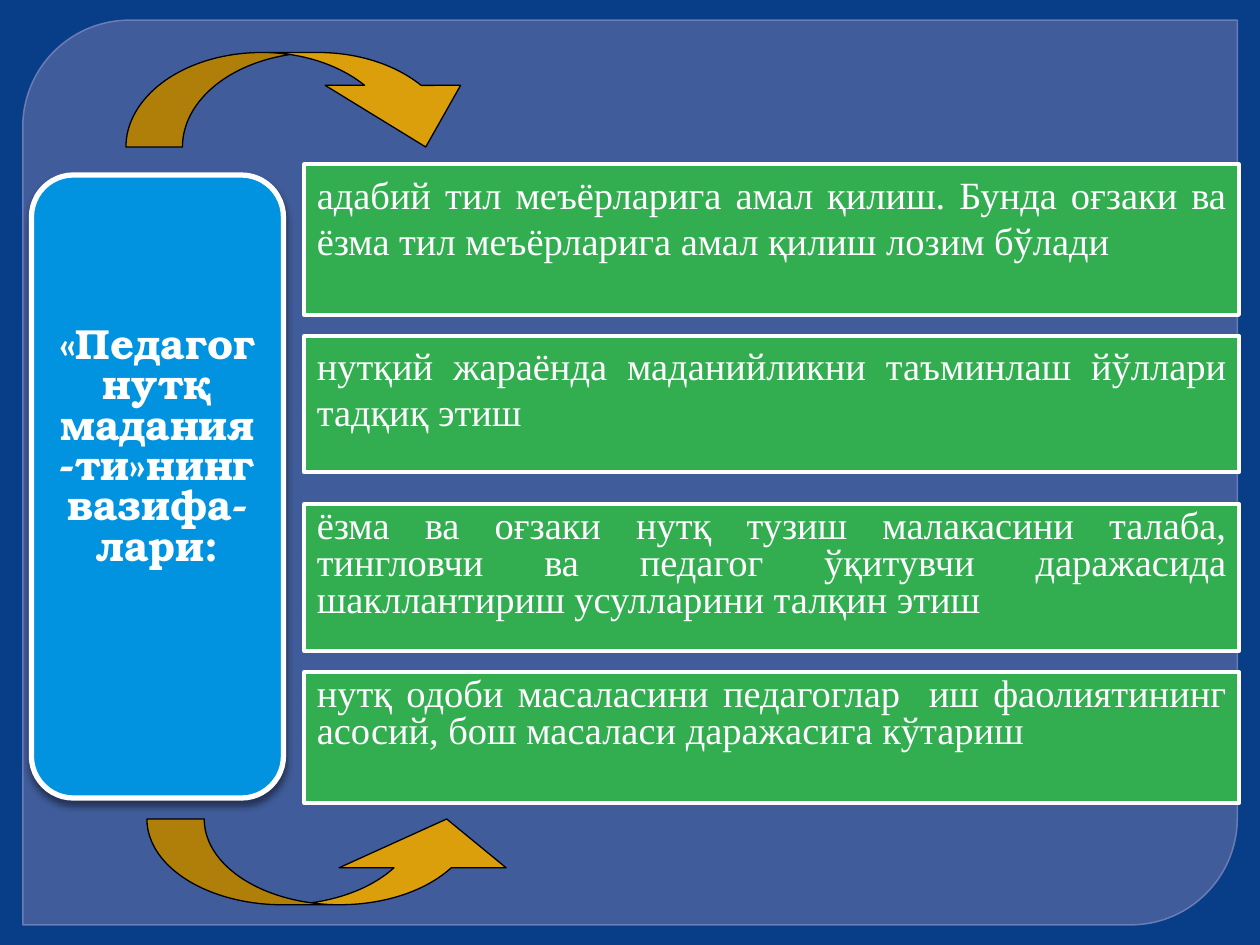
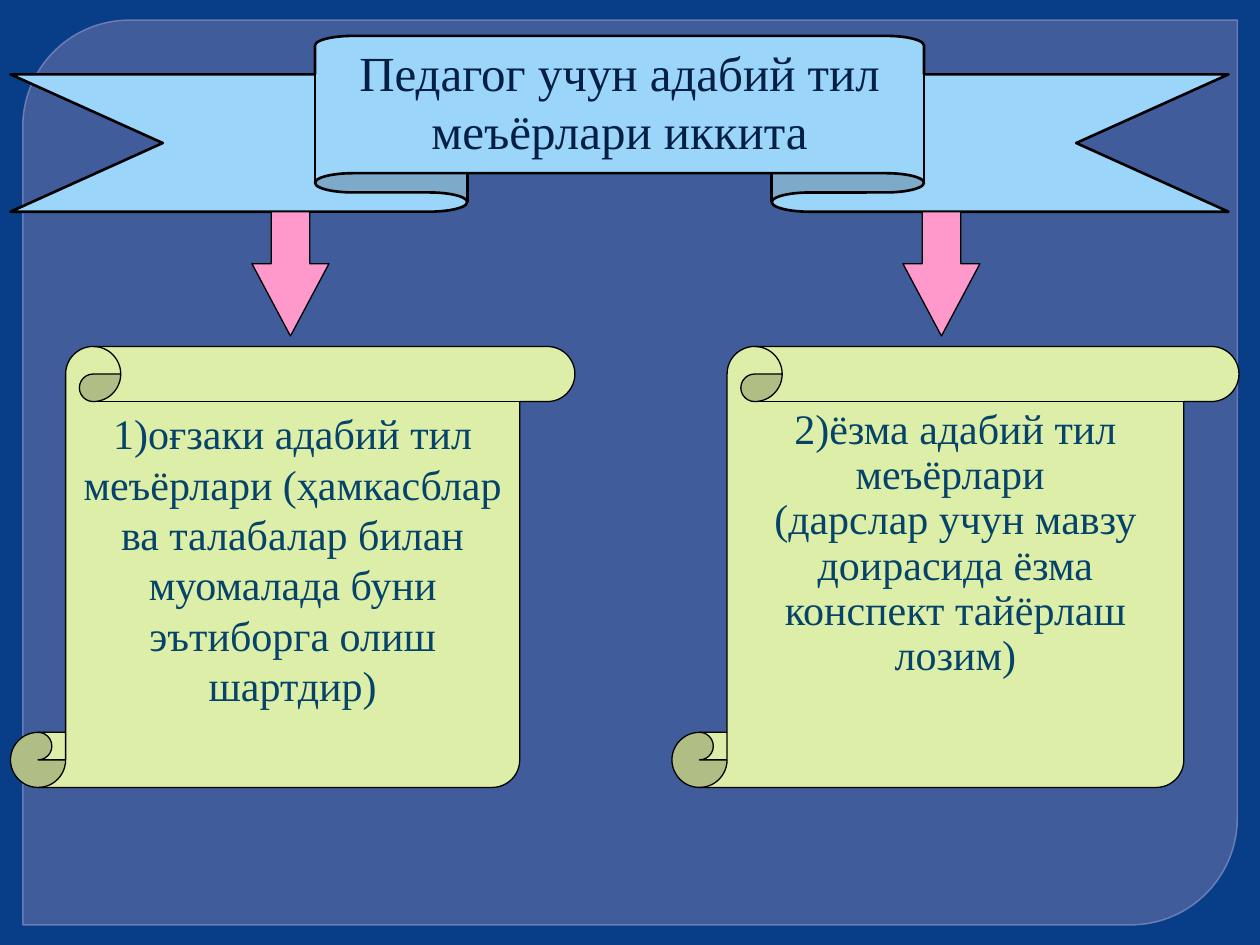
from dataclasses import dataclass

from lxml.etree import SubElement
from pptx import Presentation
from pptx.dml.color import RGBColor
from pptx.enum.shapes import MSO_SHAPE
from pptx.enum.text import MSO_ANCHOR, PP_ALIGN
from pptx.oxml.ns import qn
from pptx.util import Pt


@dataclass(frozen=True)
class Theme:
    background: str = "073E87"
    frame: str = "5F6DA5"
    frame_line: str = "7482BB"
    panel: str = "0293E0"
    task: str = "32AE51"
    curved_arrow: str = "DC9F0C"
    ribbon: str = "9BD5FA"
    down_arrow: str = "FF99CC"
    scroll: str = "DCEEA7"
    white: str = "FFFFFF"
    black: str = "000000"
    title_text: str = "041F44"
    scroll_text: str = "06436B"
    display_font: str = "TeX Gyre Bonum"
    body_font: str = "Times New Roman"
    title_size: int = 28
    body_size: int = 24
    task_size: int = 22
    thin: float = 0.75


T = Theme()


# Shared helpers
def add_box(slide, kind, box, fill, line, width, adjustments=()):
    sp = slide.shapes.add_shape(kind, *[Pt(v) for v in box])
    sp.shadow.inherit = False
    sp.fill.solid()
    sp.fill.fore_color.rgb = RGBColor.from_string(fill)
    sp.line.color.rgb = RGBColor.from_string(line)
    sp.line.width = Pt(width)
    for i, value in enumerate(adjustments):
        sp.adjustments[i] = value
    return sp


def set_alpha(color, percent):
    SubElement(color, qn("a:alpha"), val=str(percent * 1000))


def add_shadow(sp, color, alpha, blur, distance, angle):
    effects = sp._element.spPr.find(qn("a:effectLst"))
    shadow = SubElement(effects, qn("a:outerShdw"), blurRad=str(Pt(blur)),
                        dist=str(Pt(distance)), dir=str(angle * 60000))
    set_alpha(SubElement(shadow, qn("a:srgbClr"), val=color), alpha)


def write(sp, paragraphs, size, color, align=PP_ALIGN.CENTER, spacing=None,
          font=T.body_font, bold=None):
    tf = sp.text_frame
    tf.word_wrap = True
    tf.vertical_anchor = MSO_ANCHOR.TOP
    for i, text in enumerate(paragraphs):
        p = tf.add_paragraph() if i else tf.paragraphs[0]
        p.alignment = align
        p.line_spacing = spacing
        r = p.add_run()
        r.text = text
        r.font.name = font
        r.font.size = Pt(size)
        r.font.bold = bold
        r.font.color.rgb = RGBColor.from_string(color)


def add_framed_slide(prs):
    slide = prs.slides.add_slide(prs.slide_layouts[6])
    sp = add_box(slide, MSO_SHAPE.ROUND_2_DIAG_RECTANGLE, (13, 11.5, 694, 517),
                 T.frame, T.frame_line, 0.87, (0.118, 0))
    fill_color, line_color = sp._element.spPr.iter(qn("a:srgbClr"))
    set_alpha(fill_color, 65)
    set_alpha(line_color, 88)
    return slide


# Regions of the tasks slide
def add_panel(slide, box, text):
    sp = add_box(slide, MSO_SHAPE.FLOWCHART_ALTERNATE_PROCESS, box,
                 T.panel, T.white, 3)
    add_shadow(sp, T.black, 43, 4, 3, 90)
    write(sp, [text], T.body_size, T.white, spacing=0.8,
          font=T.display_font, bold=True)
    sp.text_frame.margin_top = Pt(80)


def add_tasks(slide, box, tasks):
    left, top, width = box
    for offset, height, spacing, text in tasks:
        sp = add_box(slide, MSO_SHAPE.FLOWCHART_PROCESS,
                     (left, top + offset, width, height), T.task, T.white, 2.25)
        write(sp, [text], T.task_size, T.white, PP_ALIGN.JUSTIFY, spacing)


def build_tasks_slide(prs):
    slide = add_framed_slide(prs)
    add_panel(slide, (18, 100, 144, 356),
              "«Педагог нутқ мадания-ти»нинг вазифа-лари:")
    # Arrows above and below the panel
    for kind, box, adjustments in (
        (MSO_SHAPE.CURVED_DOWN_ARROW, (72, 30, 210, 54), (0.598, 1.433, 0.652)),
        (MSO_SHAPE.CURVED_UP_ARROW, (84, 468, 219, 49), (0.668, 1.947, 0.569)),
    ):
        add_box(slide, kind, box, T.curved_arrow, T.black, T.thin, adjustments)
    # Offset from the top, height, line spacing, text
    add_tasks(slide, (174, 94, 534), (
        (0, 86, None, "адабий тил меъёрларига амал қилиш. Бунда оғзаки ва "
                      "ёзма тил меъёрларига амал қилиш лозим бўлади"),
        (98, 78, None, "нутқий жараёнда маданийликни таъминлаш йўллари "
                       "тадқиқ этиш"),
        (194, 84, 0.8, "ёзма ва оғзаки нутқ тузиш малакасини талаба, тингловчи "
                       "ва педагог ўқитувчи даражасида шакллантириш усулларини "
                       "талқин этиш"),
        (290, 75, 0.8, "нутқ одоби масаласини педагоглар  иш фаолиятининг "
                       "асосий, бош масаласи даражасига кўтариш"),
    ))


# Regions of the norms slide
def add_ribbon(slide, box, text):
    sp = add_box(slide, MSO_SHAPE.UP_RIBBON, box, T.ribbon, T.black, 1.5,
                 (0.219, 0.5))
    write(sp, [text], T.title_size, T.title_text)


def add_norm(slide, box, arrow_offset, paragraphs, spacing=None):
    left, top, width, height = box
    arrow_height, scroll_offset = 71, 77
    add_box(slide, MSO_SHAPE.DOWN_ARROW,
            (left + arrow_offset, top, 44, arrow_height),
            T.down_arrow, T.black, T.thin, (0.5, 0.939))
    sp = add_box(slide, MSO_SHAPE.VERTICAL_SCROLL,
                 (left, top + scroll_offset, width, height - scroll_offset),
                 T.scroll, T.black, T.thin, (0.125,))
    write(sp, paragraphs, T.body_size, T.scroll_text, spacing=spacing)


def build_norms_slide(prs):
    slide = add_framed_slide(prs)
    add_ribbon(slide, (6, 20.5, 696, 100.5),
               "Педагог учун адабий тил меъёрлари иккита")
    add_norm(slide, (6, 121, 322.5, 329), 138,
             ["1)оғзаки адабий тил меъёрлари (ҳамкасблар ва талабалар билан "
              "муомалада буни эътиборга олиш шартдир)"])
    add_norm(slide, (384, 121, 324, 329), 132,
             ["2)ёзма адабий тил меъёрлари ",
              "(дарслар учун мавзу доирасида ёзма конспект тайёрлаш лозим)"],
             0.9)


def main():
    prs = Presentation()
    prs.slide_width, prs.slide_height = Pt(720), Pt(540)
    fill = prs.slide_master.background.fill
    fill.solid()
    fill.fore_color.rgb = RGBColor.from_string(T.background)
    build_tasks_slide(prs)
    build_norms_slide(prs)
    prs.save("out.pptx")


if __name__ == "__main__":
    main()
